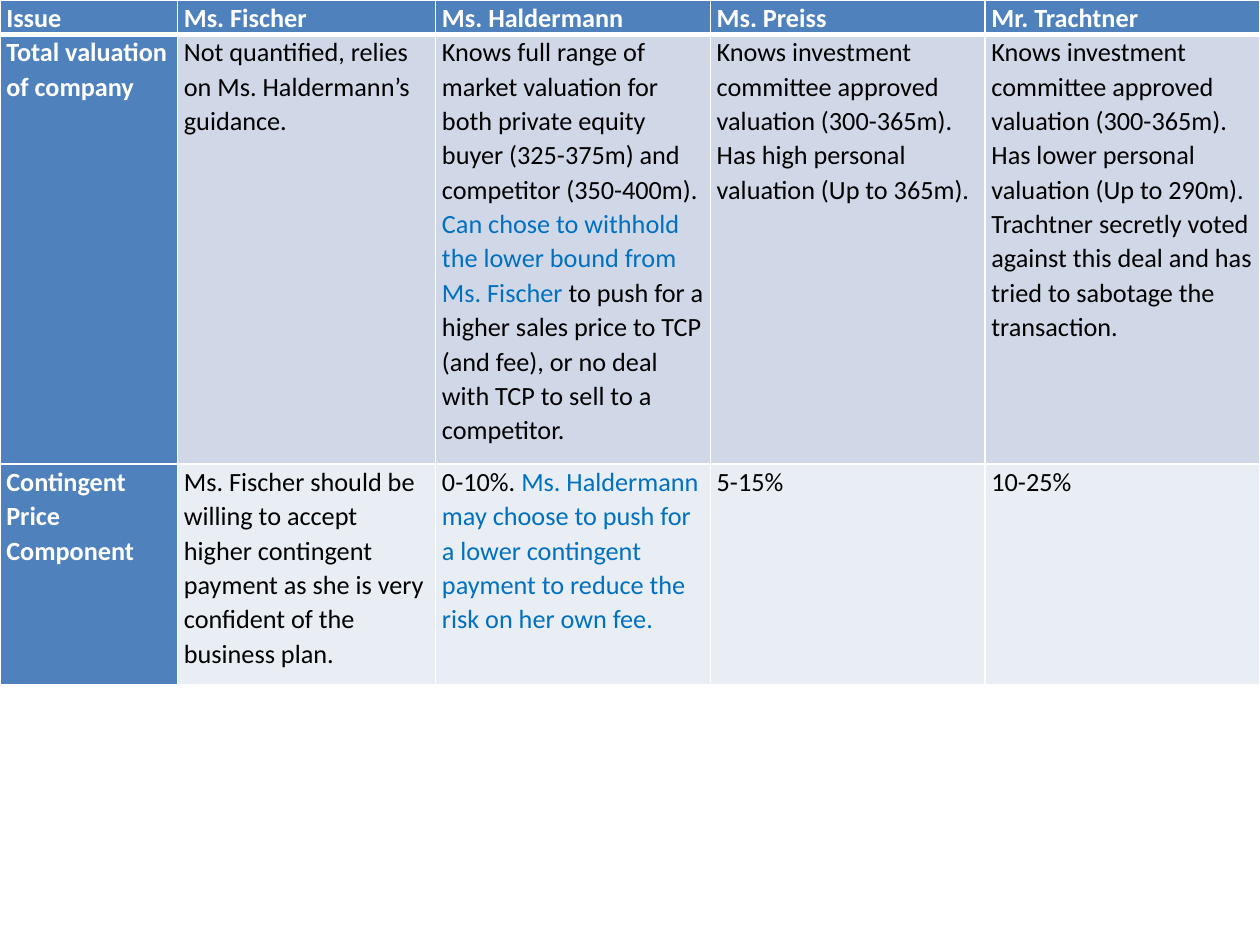
import dataclasses

import lxml.etree
import pptx
import pptx.dml.color
import pptx.enum.text
import pptx.oxml.ns
import pptx.table
import pptx.util

Pt = pptx.util.Pt
RGB = pptx.dml.color.RGBColor
ALIGN = pptx.enum.text.PP_ALIGN

WHITE = RGB(0xFF, 0xFF, 0xFF)
BLACK = RGB(0x00, 0x00, 0x00)
BLUE = RGB(0x00, 0x70, 0xC0)
HEAD = RGB(0x4F, 0x81, 0xBD)
DARK = RGB(0xD0, 0xD8, 0xE8)
LIGHT = RGB(0xE9, 0xED, 0xF4)

WIDTHS = (101.5, 147.5, 157, 157, 157)


@dataclasses.dataclass(frozen=True)
class Span:
    text: str
    color: RGB = BLACK


@dataclasses.dataclass(frozen=True)
class Row:
    height: float
    fill: RGB
    label: str
    cells: tuple[tuple[Span, ...], ...]


ROWS = (
    Row(18.72, HEAD, "Issue", tuple(
        (Span(name, WHITE),)
        for name in ("Ms. Fischer", "Ms. Haldermann", "Ms. Preiss", "Mr. Trachtner")
    )),
    Row(245.5, DARK, "Total valuation of company", (
        (Span("Not quantified, relies on Ms. Haldermann’s guidance."),),
        (
            Span("Knows full range of market valuation for both private equity "
                 "buyer (325-375m) and competitor (350-400m). "),
            Span("Can chose to withhold the lower bound from Ms. Fischer ", BLUE),
            Span("to push for a higher sales price to TCP (and fee), or no deal "
                 "with TCP to sell to a competitor."),
        ),
        (Span("Knows investment committee approved valuation (300-365m). "
              "Has high personal valuation (Up to 365m)."),),
        (Span("Knows investment committee approved valuation (300-365m). "
              "Has lower personal valuation (Up to 290m). Trachtner secretly voted "
              "against this deal and has tried to sabotage the transaction."),),
    )),
    Row(126, LIGHT, "Contingent Price Component", (
        (Span("Ms. Fischer should be willing to accept higher contingent payment "
              "as she is very confident of the business plan."),),
        (
            Span("0-10%. "),
            Span("Ms. Haldermann may choose to push for a lower contingent payment "
                 "to reduce the risk on her own fee.", BLUE),
        ),
        (Span("5-15%"),),
        (Span("10-25%"),),
    )),
)


def edge(cell: pptx.table._Cell, base: float) -> None:
    """Draw white cell borders, with the given width in points at the bottom."""
    props = cell._tc.get_or_add_tcPr()
    qn = pptx.oxml.ns.qn
    for spot, (side, width) in enumerate((("L", 1), ("R", 1), ("T", 1), ("B", base))):
        line = lxml.etree.Element(qn(f"a:ln{side}"), w=str(int(Pt(width))))
        fill = lxml.etree.SubElement(line, qn("a:solidFill"))
        lxml.etree.SubElement(fill, qn("a:srgbClr"), val=str(WHITE))
        props.insert(spot, line)


def write(cell: pptx.table._Cell, spans: tuple[Span, ...], bold: bool, align: ALIGN) -> None:
    cell.margin_left = cell.margin_right = Pt(3.6)
    cell.margin_top = cell.margin_bottom = Pt(0)
    para = cell.text_frame.paragraphs[0]
    para.alignment = align
    para.line_spacing = 1.07
    para.space_after = Pt(8)
    for span in spans:
        run = para.add_run()
        run.text = span.text
        run.font.name = "Calibri"
        run.font.size = Pt(15)
        run.font.bold = bold
        run.font.color.rgb = span.color


def build(table: pptx.table.Table) -> None:
    for col, width in zip(table.columns, WIDTHS):
        col.width = Pt(width)
    for top, row in enumerate(ROWS):
        table.rows[top].height = Pt(row.height)
        first = top == 0
        align = ALIGN.JUSTIFY if first else ALIGN.LEFT
        for left, spans in enumerate(((Span(row.label, WHITE),), *row.cells)):
            cell = table.cell(top, left)
            cell.fill.solid()
            cell.fill.fore_color.rgb = HEAD if left == 0 else row.fill
            edge(cell, 3 if first else 1)
            write(cell, spans, first or left == 0, align)


def main() -> None:
    deck = pptx.Presentation()
    deck.slide_width, deck.slide_height = Pt(720), Pt(540)
    slide = deck.slides.add_slide(deck.slide_layouts[6])
    high = sum(row.height for row in ROWS)
    frame = slide.shapes.add_table(
        len(ROWS), len(WIDTHS), Pt(0), Pt(0), Pt(sum(WIDTHS)), Pt(high))
    build(frame.table)
    deck.save("out.pptx")


if __name__ == "__main__":
    main()
